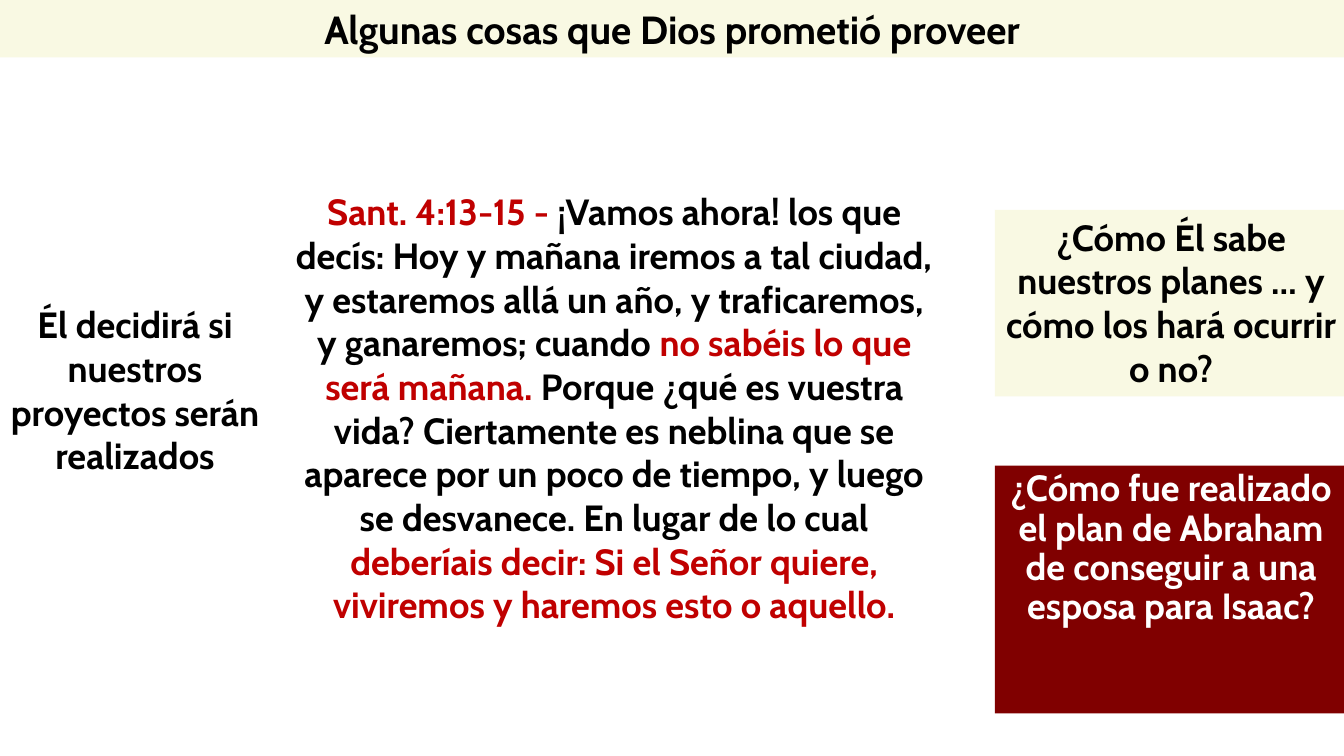
"""Build a slide on the things God promised to provide, with a passage and two questions."""
from dataclasses import dataclass

import pptx
import pptx.dml.color
import pptx.enum.shapes
import pptx.enum.text
import pptx.util

COLORS = {
    "black": "000000",
    "white": "FFFFFF",
    "red": "C00000",
    "maroon": "800000",
    "cream": "F9F9E3",
}
FONT = "Cabin"
CARD_LEFT, CARD_WIDTH = 710.64, 252


@dataclass(frozen=True)
class Run:
    text: str
    color: str = "black"


@dataclass(frozen=True)
class Block:
    left: float
    top: float
    width: float
    height: float
    runs: tuple[Run, ...]
    fill: str | None = None
    size: float = 26
    line_spacing: float = 1.0


BLOCKS = (
    Block(0, 212.4, 193, 164.9, (Run("Él decidirá si nuestros proyectos serán realizados"),)),
    Block(
        CARD_LEFT, 149.9, CARD_WIDTH, 133.2,
        (Run("¿Cómo Él sabe nuestros planes … y cómo los hará ocurrir o no?"),),
        fill="cream",
    ),
    Block(
        203.8, 131.8, 470.2, 385.2,
        (
            Run("Sant. 4:13-15 - ", "red"),
            Run("¡Vamos ahora! los que decís: Hoy y mañana iremos a tal ciudad, "
                "y estaremos allá un año, y traficaremos, y ganaremos; cuando "),
            Run("no sabéis lo que será mañana. ", "red"),
            Run("Porque ¿qué es vuestra vida? Ciertamente es neblina que se aparece "
                "por un poco de tiempo, y luego se desvanece. En lugar de lo cual "),
            Run("deberíais decir: Si el Señor quiere, viviremos y haremos esto o aquello.", "red"),
        ),
    ),
    Block(
        CARD_LEFT, 332.6, CARD_WIDTH, 177.1,
        (Run("¿Cómo fue realizado el plan de Abraham de conseguir a una esposa para Isaac?", "white"),),
        fill="maroon", line_spacing=0.9,
    ),
    Block(
        0, 0, 960, 41,
        (Run("Algunas cosas que Dios prometió proveer"),),
        fill="cream", size=28,
    ),
)


def rgb(name: str) -> pptx.dml.color.RGBColor:
    return pptx.dml.color.RGBColor.from_string(COLORS[name])


def add_run(p, text: str, *, size: float, color: str, bold: bool = True) -> None:
    r = p.add_run()
    r.text = text
    r.font.name = FONT
    r.font.size = pptx.util.Pt(size)
    r.font.bold = bold
    r.font.color.rgb = rgb(color)


def add_block(s, block: Block) -> None:
    box = [pptx.util.Pt(v) for v in (block.left, block.top, block.width, block.height)]
    if block.fill:
        sp = s.shapes.add_shape(pptx.enum.shapes.MSO_SHAPE.RECTANGLE, *box)
        sp.shadow.inherit = False
        sp.fill.solid()
        sp.fill.fore_color.rgb = rgb(block.fill)
        sp.line.fill.background()
    else:
        sp = s.shapes.add_textbox(*box)
    tf = sp.text_frame
    tf.word_wrap = True
    tf.vertical_anchor = pptx.enum.text.MSO_ANCHOR.TOP
    p = tf.paragraphs[0]
    p.alignment = pptx.enum.text.PP_ALIGN.CENTER
    p.line_spacing = block.line_spacing
    for run in block.runs:
        add_run(p, run.text, size=block.size, color=run.color)


def main() -> None:
    prs = pptx.Presentation()
    prs.slide_width = pptx.util.Pt(960)
    prs.slide_height = pptx.util.Pt(540)
    s = prs.slides.add_slide(prs.slide_layouts[6])
    for block in BLOCKS:
        add_block(s, block)
    prs.save("out.pptx")


if __name__ == "__main__":
    main()
